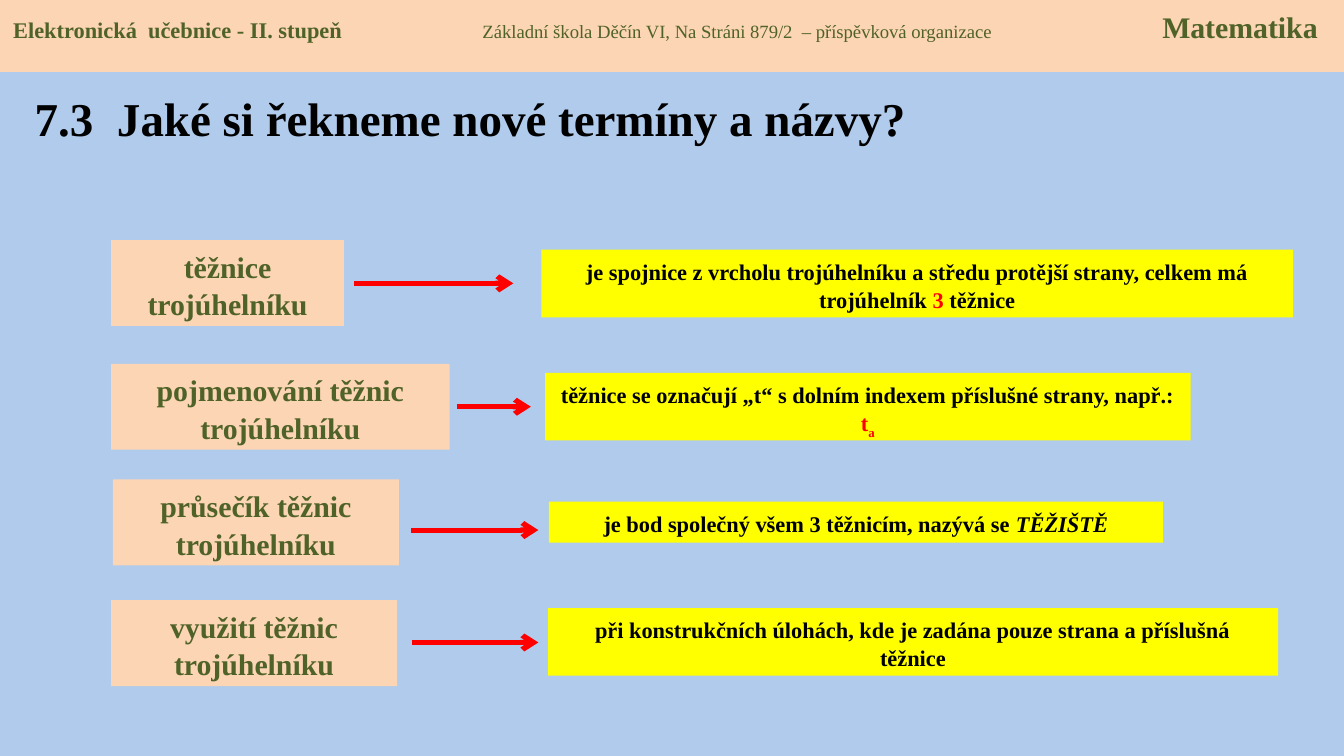
from lxml import etree
from pptx import Presentation
from pptx.dml.color import RGBColor
from pptx.enum.shapes import MSO_CONNECTOR, MSO_SHAPE
from pptx.enum.text import MSO_ANCHOR, PP_ALIGN
from pptx.oxml.ns import qn
from pptx.util import Pt

RECTANGLE = MSO_SHAPE.RECTANGLE
STRAIGHT = MSO_CONNECTOR.STRAIGHT
TOP, MIDDLE = MSO_ANCHOR.TOP, MSO_ANCHOR.MIDDLE
LEFT, CENTER = PP_ALIGN.LEFT, PP_ALIGN.CENTER

BLUE = RGBColor(0xB0, 0xCB, 0xEB)
PEACH = RGBColor(0xFC, 0xD5, 0xB5)
YELLOW = RGBColor(0xFF, 0xFF, 0x00)
GREEN = RGBColor(0x4F, 0x62, 0x28)
BLACK = RGBColor(0x00, 0x00, 0x00)
RED = RGBColor(0xFF, 0x00, 0x00)
FONT = "Times New Roman"

TERM_HEIGHT = 46.1
TERMS = [
    ("těžnice trojúhelníku", (59.5, 128.6, 124.8)),
    ("pojmenování těžnic trojúhelníku", (59.5, 194.9, 181.4)),
    ("průsečík těžnic trojúhelníku", (60.5, 256.8, 153.2)),
    ("využití těžnic trojúhelníku", (59.5, 321.5, 153.2)),
]
MEANINGS = [
    ([("je spojnice z vrcholu trojúhelníku a středu protější strany, celkem má trojúhelník ", {}),
      ("3", {"color": RED}),
      (" těžnice", {})], (290, 133.8, 402.8, 36.2)),
    ([("těžnice se označují „t“ s dolním indexem příslušné strany, např.: ", {}),
      ("t", {"color": RED}),
      ("a", {"color": RED, "baseline": -25})], (292, 199.7, 345.9, 36.2)),
    ([("je bod společný všem 3 těžnicím, nazývá se ", {}),
      ("TĚŽIŠTĚ", {"italic": True})], (294, 268.8, 329, 22)),
    ([("při konstrukčních úlohách, kde je zadána pouze strana a příslušná těžnice", {})],
     (293.5, 325.8, 391.3, 36.2)),
]
ARROWS = [
    (189.8, 151.8, 275),
    (244.6, 217.9, 284.4),
    (220.2, 284, 288.4),
    (220.5, 344.2, 288.4),
]


def add_run(paragraph, text, *, size, color=BLACK, bold=True, italic=False, baseline=0):
    run = paragraph.add_run()
    run.text = text
    font = run.font
    font.name, font.size = FONT, Pt(size)
    font.bold, font.italic = bold, italic
    font.color.rgb = color
    if baseline:
        run._r.get_or_add_rPr().set("baseline", str(baseline * 1000))


def start_text(shape, alignment, anchor, spacing=1.05):
    frame = shape.text_frame
    frame.word_wrap = True
    frame.vertical_anchor = anchor
    paragraph = frame.paragraphs[0]
    paragraph.alignment = alignment
    paragraph.line_spacing = spacing
    return paragraph


def add_box(slide, bounds, fill, alignment=CENTER):
    shape = slide.shapes.add_shape(RECTANGLE, *map(Pt, bounds))
    shape.shadow.inherit = False
    shape.fill.solid()
    shape.fill.fore_color.rgb = fill
    shape.line.fill.background()
    return start_text(shape, alignment, TOP)


def add_tab_stops(paragraph, stops):
    tab_list = etree.SubElement(paragraph._p.get_or_add_pPr(), qn("a:tabLst"))
    for position, alignment in stops:
        etree.SubElement(tab_list, qn("a:tab"), pos=str(int(Pt(position))), algn=alignment)


def add_header(slide):
    paragraph = add_box(slide, (0, 0, 720, 38.6), PEACH, LEFT)
    add_tab_stops(paragraph, [(251.4, "l"), (698.9, "r")])
    add_run(paragraph, "Elektronická  učebnice - II. stupeň\t", size=12, color=GREEN)
    add_run(paragraph, "Základní škola Děčín VI, Na Stráni 879/2  – příspěvková organizace\t",
            size=10, color=GREEN, bold=False)
    add_run(paragraph, "Matematika", size=16, color=GREEN)


def add_title(slide):
    box = slide.shapes.add_textbox(Pt(11.5), Pt(38.9), Pt(481.7), Pt(46.8))
    paragraph = start_text(box, LEFT, MIDDLE)
    add_run(paragraph, "7.3  Jaké si řekneme nové termíny a názvy?", size=25.2)


def add_arrow(slide, left, top, right):
    arrow = slide.shapes.add_connector(STRAIGHT, Pt(left), Pt(top), Pt(right), Pt(top))
    arrow.line.color.rgb = RED
    arrow.line.width = Pt(2.75)
    etree.SubElement(arrow.line._get_or_add_ln(), qn("a:tailEnd"), type="arrow")
    etree.SubElement(arrow._element.spPr, qn("a:effectLst"))


def main():
    presentation = Presentation()
    presentation.slide_width, presentation.slide_height = Pt(720), Pt(405)
    slide = presentation.slides.add_slide(presentation.slide_layouts[6])
    slide.background.fill.solid()
    slide.background.fill.fore_color.rgb = BLUE

    add_title(slide)
    add_header(slide)
    for text, bounds in TERMS:
        add_run(add_box(slide, (*bounds, TERM_HEIGHT), PEACH), text, size=16, color=GREEN)
    for runs, bounds in MEANINGS:
        paragraph = add_box(slide, bounds, YELLOW)
        for text, text_format in runs:
            add_run(paragraph, text, size=12, **text_format)
    for arrow in ARROWS:
        add_arrow(slide, *arrow)

    presentation.save("out.pptx")


if __name__ == "__main__":
    main()
